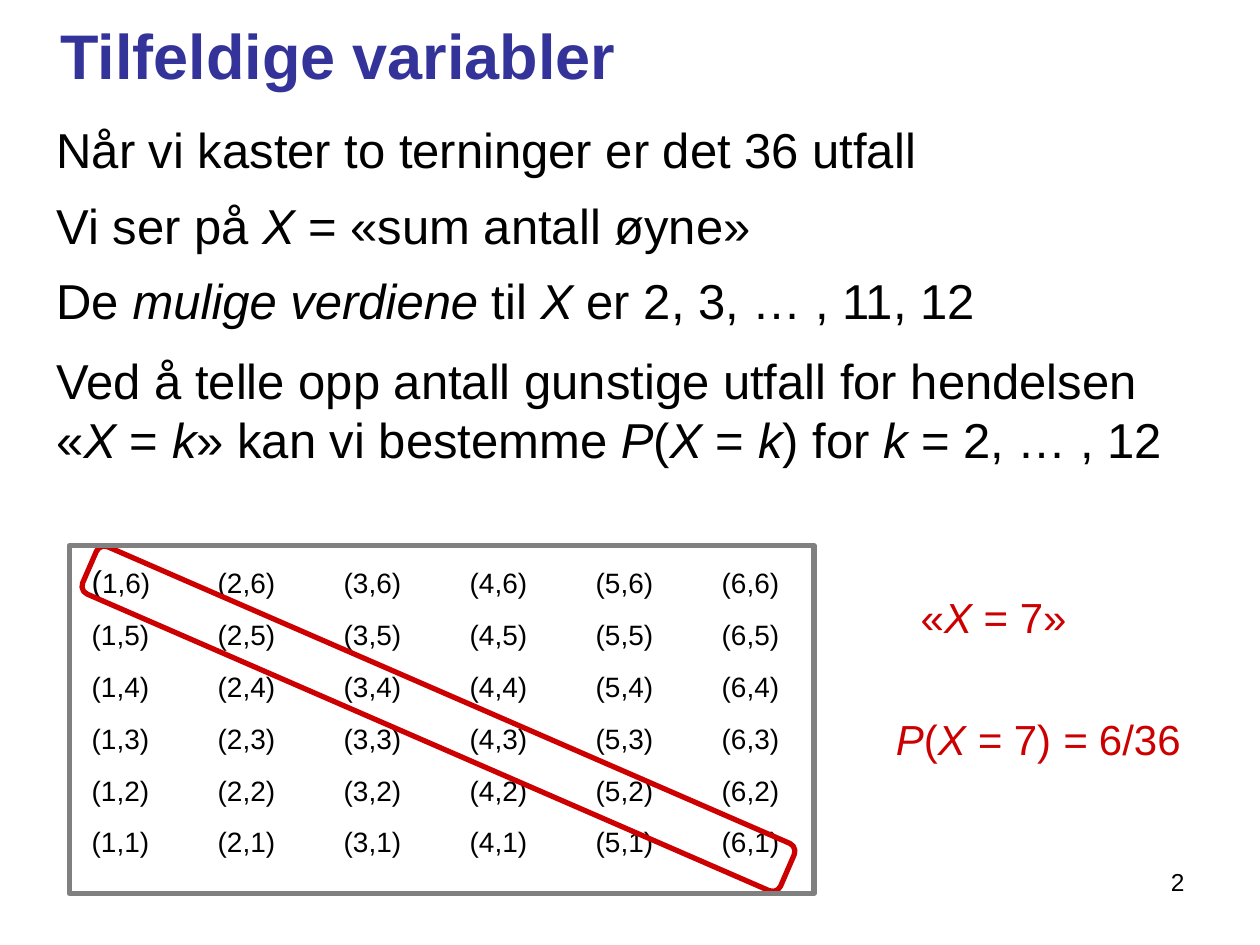
"""Build a slide on random variables with the 36 outcomes of two dice."""
from lxml.etree import SubElement
from pptx import Presentation
from pptx.dml.color import RGBColor
from pptx.enum.shapes import MSO_SHAPE as Shape
from pptx.enum.text import MSO_ANCHOR as Anchor, PP_ALIGN as Align
from pptx.oxml.ns import qn
from pptx.util import Cm, Pt

BLUE = RGBColor(0x33, 0x33, 0x99)
RED = RGBColor(0xCC, 0x00, 0x00)
GREY = RGBColor(0x80, 0x80, 0x80)
BLACK = RGBColor(0x00, 0x00, 0x00)

FACES = range(1, 7)
OUTCOMES = ["\t".join(f"({a},{b})" for a in FACES) for b in reversed(FACES)]
OUTCOMES[0] = OUTCOMES[0].replace("(", "(||", 1)

# Every second part between bars is italic.
TEXTS = {
    "title": dict(box=(0.97, 0, 16, 2.21), lines=["Tilfeldige variabler"],
                  size=36, color=BLUE, bold=True, anchor=Anchor.MIDDLE),
    "intro": dict(box=(0.89, 1.93, 23.4, 3.38), spacing=1.3, lines=[
        "Når vi kaster to terninger er det 36 utfall",
        "Vi ser på |X |= «sum antall øyne»"]),
    "values": dict(box=(0.89, 5.33, 23.4, 4.27), before=12, lines=[
        "De |mulige verdiene |til |X| er 2, 3, … , 11, 12",
        "Ved å telle opp antall gunstige utfall for hendelsen «|X |= |k|» kan vi "
        "bestemme |P|(|X |= |k|) for| k| = 2, … , 12"]),
    "outcomes": dict(box=(1.6, 11.2, 14.6, 7.52), lines=OUTCOMES, size=16, before=10.4),
    "event": dict(box=(18.31, 11.79, 3.78, 1.27), lines=["«|X |= 7»"], size=24, color=RED),
    "probability": dict(box=(17.81, 14.25, 6.5, 1.27), lines=["|P|(|X = |7) |= |6/36"],
                        size=24, color=RED),
    "number": dict(box=(18.21, 17.35, 5.92, 1.32), lines=["2"], size=14, align=Align.RIGHT),
}
OUTLINES = [
    (Shape.ROUNDED_RECTANGLE, (1.17, 13.97, 15.34, 1.04), RED, 23.5),
    (Shape.RECTANGLE, (1.4, 11, 15.01, 7.01), GREY, 0),
]


def add_text(s, box, lines, size=28, color=BLACK, bold=False, before=0,
             spacing=None, align=None, anchor=Anchor.TOP):
    tf = s.shapes.add_textbox(*map(Cm, box)).text_frame
    tf.word_wrap = True
    tf.vertical_anchor = anchor
    for i, line in enumerate(lines):
        p = tf.add_paragraph() if i else tf.paragraphs[0]
        p.alignment = align
        p.line_spacing = spacing
        p.space_before = Pt(before if i else 0)
        for j, part in enumerate(line.split("|")):
            if part:
                r = p.add_run()
                r.text = part
                r.font.name, r.font.size = "Arial", Pt(size)
                r.font.bold, r.font.italic = bold, j % 2 == 1
                r.font.color.rgb = color
    return tf


def add_tabs(p, count, step):
    tabs = SubElement(p._p.get_or_add_pPr(), qn("a:tabLst"))
    for i in range(1, count + 1):
        SubElement(tabs, qn("a:tab"), pos=str(Cm(step * i)), algn="l")


def add_outline(s, kind, box, color, rotation):
    sp = s.shapes.add_shape(kind, *map(Cm, box))
    sp.shadow.inherit = False
    sp.fill.background()
    sp.line.color.rgb = color
    sp.line.width = Pt(3)
    sp.rotation = rotation


def main():
    prs = Presentation()
    prs.slide_width, prs.slide_height = Cm(25.4), Cm(19.05)
    s = prs.slides.add_slide(prs.slide_layouts[6])
    frames = {name: add_text(s, **text) for name, text in TEXTS.items()}
    outcomes = frames["outcomes"].paragraphs
    for p in outcomes:
        add_tabs(p, len(FACES) - 1, 2.54)
    outcomes[0].runs[0].font.size = Pt(18)
    for outline in OUTLINES:
        add_outline(s, *outline)
    prs.save("out.pptx")


if __name__ == "__main__":
    main()
